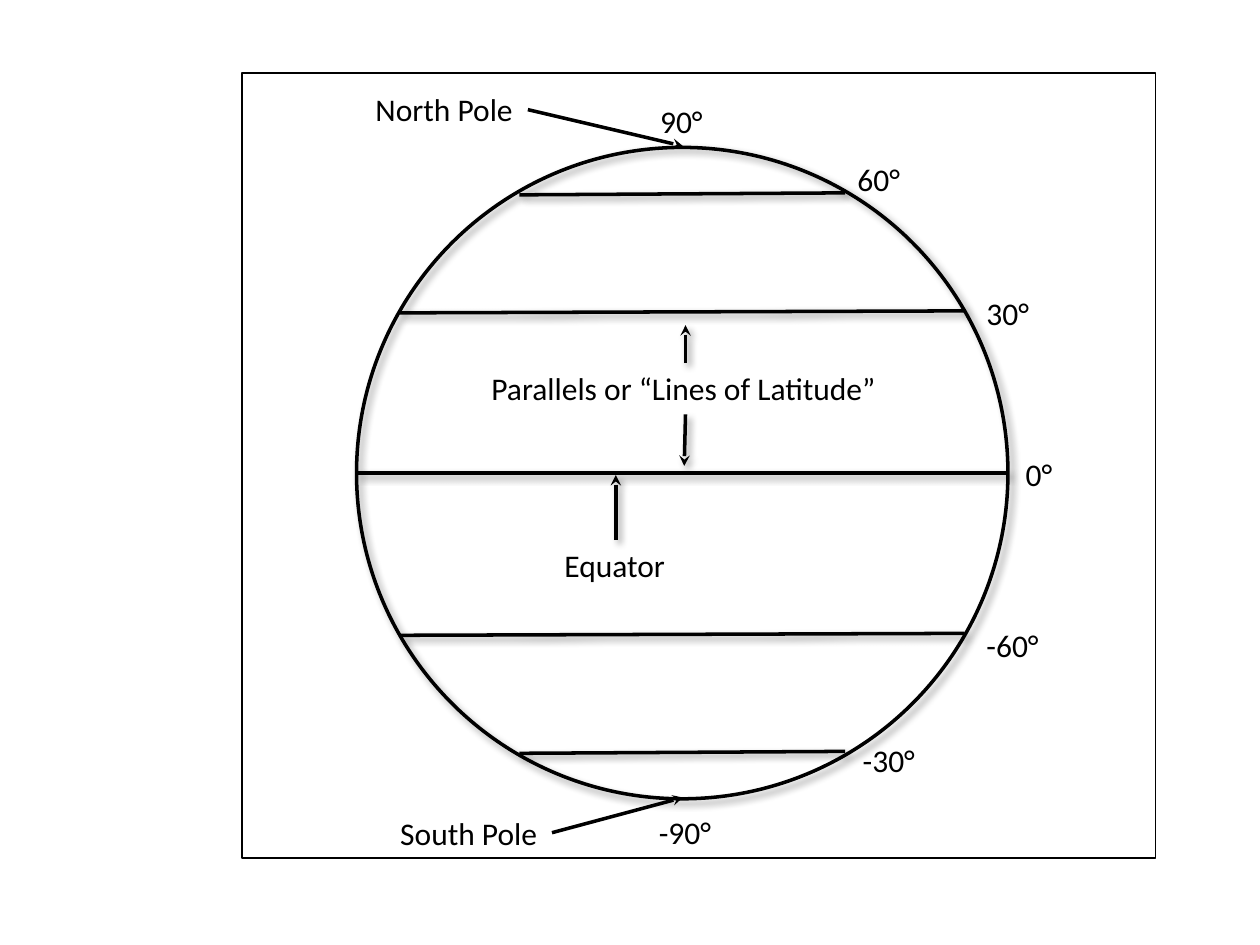
import math
from dataclasses import dataclass

import pptx
import pptx.dml.color
import pptx.enum.shapes
import pptx.enum.text
import pptx.oxml
import pptx.oxml.ns
import pptx.util

WIDTH, HEIGHT = 10, 7.5
INK = "000000"
NAMESPACE = pptx.oxml.ns.nsdecls("a")
SHADOW = (
    f'<a:effectLst {NAMESPACE}><a:outerShdw blurRad="50800" dist="38100" '
    f'dir="2700000" algn="tl" rotWithShape="0"><a:srgbClr val="{INK}">'
    '<a:alpha val="40000"/></a:srgbClr></a:outerShdw></a:effectLst>'
)
NO_SHADOW = f"<a:effectLst {NAMESPACE}/>"

# Label text, then left, top and width as percentages of the globe's box
LABELS = [
    ("90°", 44.7, -7.9, 10.4),
    ("60°", 75, 1, 10.4),
    ("30°", 94.8, 21.5, 10.4),
    ("0°", 100.8, 46.2, 8.1),
    ("-60°", 94.8, 72.5, 12),
    ("-30°", 75.8, 90.1, 12),
    ("-90°", 44.5, 101.2, 12),
    ("North Pole", 1, -9.7, 25.1),
    ("South Pole", 4.8, 101.4, 25.1),
    ("Equator", 30, 60.3, 19.5),
    ("Parallels or “Lines of Latitude”", 18.8, 33.1, 63.4),
]
LABEL_HEIGHT = 7.7

# Start and end as percentages of the globe's box, then whether shadowed
ARROWS = [
    ((26.3, -5.8), (50.1, -0.2), False),   # north pole
    ((30, 105.2), (50.1, 99.8), False),    # south pole
    ((39.8, 60.3), (39.8, 50.3), True),    # equator
    ((50.5, 33.1), (50.5, 27.3), True),    # up to a parallel
    ((50.5, 41), (50.3, 48.9), True),      # down to a parallel
]


@dataclass
class Box:
    left: float
    top: float
    width: float
    height: float

    def point(self, across, down):
        """Turn percentages of this box into slide lengths."""
        return (pptx.util.Inches(self.left + self.width * across / 100),
                pptx.util.Inches(self.top + self.height * down / 100))

    def size(self, across, down):
        return (pptx.util.Inches(self.width * across / 100),
                pptx.util.Inches(self.height * down / 100))


def color(value):
    return pptx.dml.color.RGBColor.from_string(value)


def draw_outline(page, kind, box, weight):
    shape = page.shapes.add_shape(kind, *box.point(0, 0), *box.size(100, 100))
    shape.shadow.inherit = False
    shape.fill.background()
    shape.line.color.rgb = color(INK)
    shape.line.width = pptx.util.Pt(weight)
    return shape


def set_shadow(shape, effects):
    properties = shape._element.spPr
    for old in properties.findall(pptx.oxml.ns.qn("a:effectLst")):
        properties.remove(old)
    properties.append(pptx.oxml.parse_xml(effects))


def draw_line(page, box, start, end, shadowed=True, arrow=False):
    line = page.shapes.add_connector(
        pptx.enum.shapes.MSO_CONNECTOR.STRAIGHT,
        *box.point(*start), *box.point(*end))
    line.line.color.rgb = color(INK)
    line.line.width = pptx.util.Pt(2)
    if arrow:
        line.line._get_or_add_ln().append(pptx.oxml.parse_xml(
            f'<a:tailEnd {NAMESPACE} type="stealth"/>'))
    set_shadow(line, SHADOW if shadowed else NO_SHADOW)


def draw_label(page, box, text, left, top, width):
    label = page.shapes.add_textbox(
        *box.point(left, top), *box.size(width, LABEL_HEIGHT))
    frame = label.text_frame
    frame.word_wrap = False
    frame.auto_size = pptx.enum.text.MSO_AUTO_SIZE.SHAPE_TO_FIT_TEXT
    para = frame.paragraphs[0]
    para.text = text
    para.font.name = "Calibri"
    para.font.size = pptx.util.Pt(18)
    para.font.color.rgb = color(INK)


def draw_globe(page, box):
    """Circle with a chord for each parallel."""
    circle = draw_outline(page, pptx.enum.shapes.MSO_SHAPE.OVAL, box, 2)
    set_shadow(circle, SHADOW)
    for latitude in (60, 30, 0, -30, -60):
        angle = math.radians(latitude)
        reach = 50 * math.cos(angle)
        down = 50 - 49.5 * math.sin(angle)
        tilt = 0.15 if latitude else 0  # the parallels rise slightly rightward
        draw_line(page, box, (50 - reach, down + tilt), (50 + reach, down - tilt))


def draw_notes(page, box):
    """Degree marks, names and the arrows that point from them."""
    for label in LABELS:
        draw_label(page, box, *label)
    for start, end, shadowed in ARROWS:
        draw_line(page, box, start, end, shadowed, arrow=True)


def main():
    deck = pptx.Presentation()
    deck.slide_width = pptx.util.Inches(WIDTH)
    deck.slide_height = pptx.util.Inches(HEIGHT)
    page = deck.slides.add_slide(deck.slide_layouts[6])

    # Frame around the diagram
    frame = Box(1.92, 0.58, 7.25, 6.23)
    draw_outline(page, pptx.enum.shapes.MSO_SHAPE.RECTANGLE, frame, 1)

    # Globe and its annotations
    globe = Box(2.83, 1.17, 5.17, 5.17)
    draw_globe(page, globe)
    draw_notes(page, globe)

    deck.save("out.pptx")


if __name__ == "__main__":
    main()
